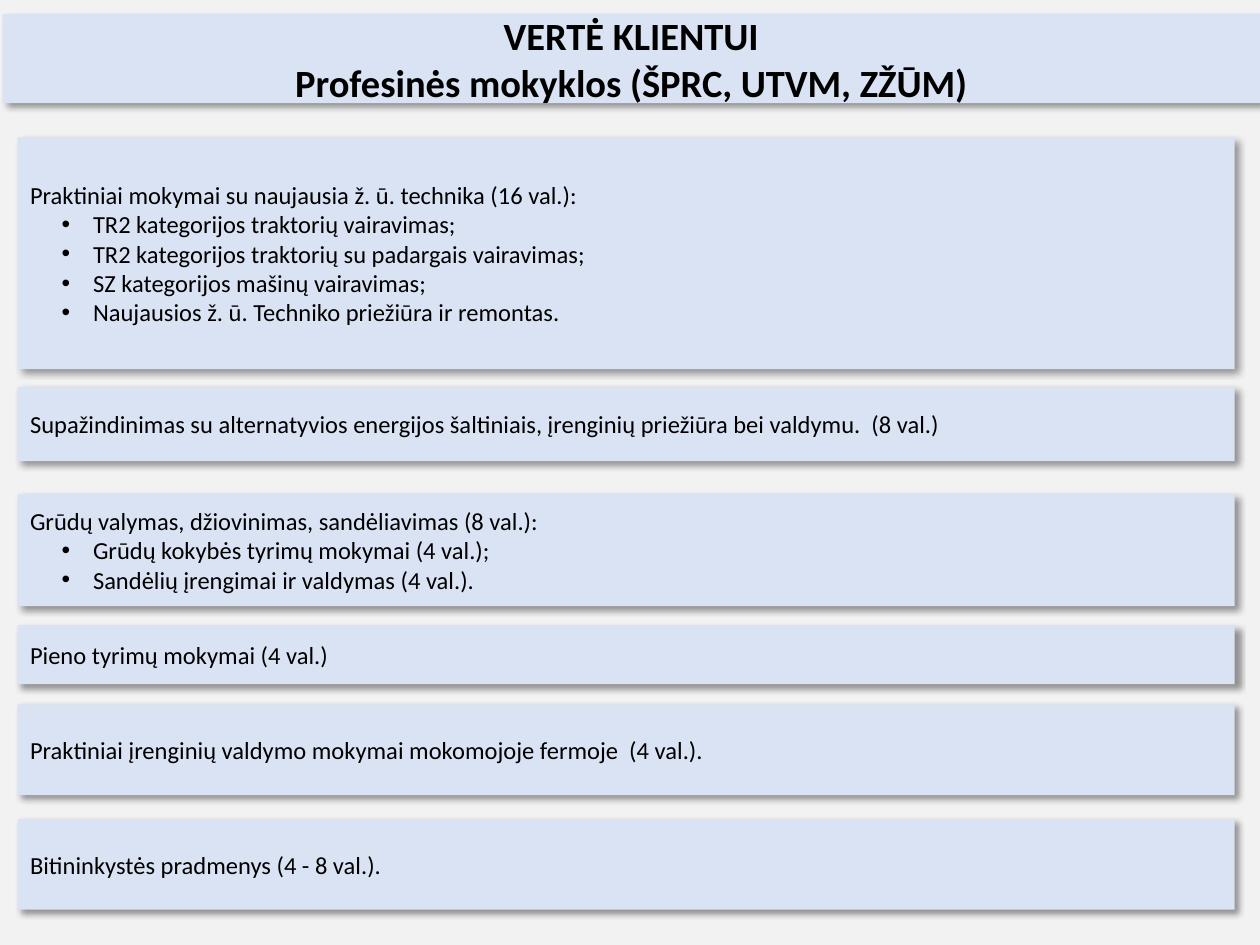
from lxml import etree
from pptx import Presentation
from pptx.dml.color import RGBColor
from pptx.enum.shapes import MSO_SHAPE
from pptx.enum.text import MSO_ANCHOR, MSO_AUTO_SIZE, PP_ALIGN
from pptx.oxml.ns import qn
from pptx.util import Inches, Pt

RECT = MSO_SHAPE.RECTANGLE
MIDDLE = MSO_ANCHOR.MIDDLE
FIXED = MSO_AUTO_SIZE.NONE
LEFT, CENTER = PP_ALIGN.LEFT, PP_ALIGN.CENTER

WIDTH, HEIGHT = 10, 7.5
COLORS = {"back": "F2F2F2", "panel": "DAE3F3", "text": "000000", "shade": "000000"}
TITLE = ["VERTĖ KLIENTUI", "Profesinės mokyklos (ŠPRC, UTVM, ZŽŪM)"]
PANELS = [
    (1.09, 1.84, "Praktiniai mokymai su naujausia ž. ū. technika (16 val.):", [
        "TR2 kategorijos traktorių vairavimas;",
        "TR2 kategorijos traktorių su padargais vairavimas;",
        "SZ kategorijos mašinų vairavimas;",
        "Naujausios ž. ū. Techniko priežiūra ir remontas.",
    ]),
    (3.07, 0.59, "Supažindinimas su alternatyvios energijos šaltiniais, "
                 "įrenginių priežiūra bei valdymu.  (8 val.)", []),
    (3.92, 0.89, "Grūdų valymas, džiovinimas, sandėliavimas (8 val.):", [
        "Grūdų kokybės tyrimų mokymai (4 val.);",
        "Sandėlių įrengimai ir valdymas (4 val.).",
    ]),
    (4.96, 0.47, "Pieno tyrimų mokymai (4 val.)", []),
    (5.59, 0.72, "Praktiniai įrenginių valdymo mokymai mokomojoje fermoje  (4 val.).", []),
    (6.5, 0.72, "Bitininkystės pradmenys (4 - 8 val.).", []),
]


class Deck:
    font = "Calibri"
    left, span = 0.14 / WIDTH, 9.66 / WIDTH

    def __init__(self):
        self.file = Presentation()
        self.file.slide_width = Inches(WIDTH)
        self.file.slide_height = Inches(HEIGHT)
        self.slide = self.file.slides.add_slide(self.file.slide_layouts[5])
        fill = self.slide.background.fill
        fill.solid()
        fill.fore_color.rgb = self.color("back")

    def color(self, name):
        return RGBColor.from_string(COLORS[name])

    def place(self, x, y, w, h):
        return (Inches(x * WIDTH), Inches(y * HEIGHT),
                Inches(w * WIDTH), Inches(h * HEIGHT))

    def style(self, shape):
        shape.fill.solid()
        shape.fill.fore_color.rgb = self.color("panel")
        shape.line.fill.background()
        shape.shadow.inherit = False
        effect = shape._element.spPr.find(qn("a:effectLst"))
        shade = etree.SubElement(
            effect, qn("a:outerShdw"), blurRad=str(Pt(4)), dist=str(Pt(3)),
            dir=str(45 * 60000), algn="tl", rotWithShape="0")
        tint = etree.SubElement(shade, qn("a:srgbClr"), val=COLORS["shade"])
        etree.SubElement(tint, qn("a:alpha"), val="40000")

    def label(self, shape, lines, size, align, bold=False):
        frame = shape.text_frame
        frame.text = "\n".join(lines)
        frame.word_wrap = True
        frame.auto_size = FIXED
        frame.vertical_anchor = MIDDLE
        for para in frame.paragraphs:
            para.alignment = align
            para.font.name = self.font
            para.font.size = Pt(size)
            para.font.bold = bold
            para.font.color.rgb = self.color("text")

    def bullet(self, para):
        para.level = 1
        props = para._p.get_or_add_pPr()
        props.set("marL", str(Inches(0.5)))
        props.set("indent", str(Inches(-0.25)))
        mark = etree.Element(qn("a:buChar"), char="•")
        face = etree.Element(qn("a:buFont"), typeface="Arial")
        props.insert(0, mark)
        props.insert(0, face)

    def title(self, x, y, w, h, lines):
        shape = self.slide.shapes.title
        shape.left, shape.top, shape.width, shape.height = self.place(x, y, w, h)
        self.style(shape)
        self.label(shape, lines, 22, CENTER, True)

    def panel(self, y, h, head, items):
        area = self.place(self.left, y, self.span, h)
        shape = self.slide.shapes.add_shape(RECT, *area)
        self.style(shape)
        self.label(shape, [head, *items], 14, LEFT)
        for para in shape.text_frame.paragraphs[1:]:
            self.bullet(para)


def main():
    deck = Deck()
    deck.title(0.02 / WIDTH, 0.11 / HEIGHT, 9.98 / WIDTH, 0.71 / HEIGHT, TITLE)
    for top, tall, head, items in PANELS:
        deck.panel(top / HEIGHT, tall / HEIGHT, head, items)
    deck.file.save("out.pptx")


if __name__ == "__main__":
    main()
